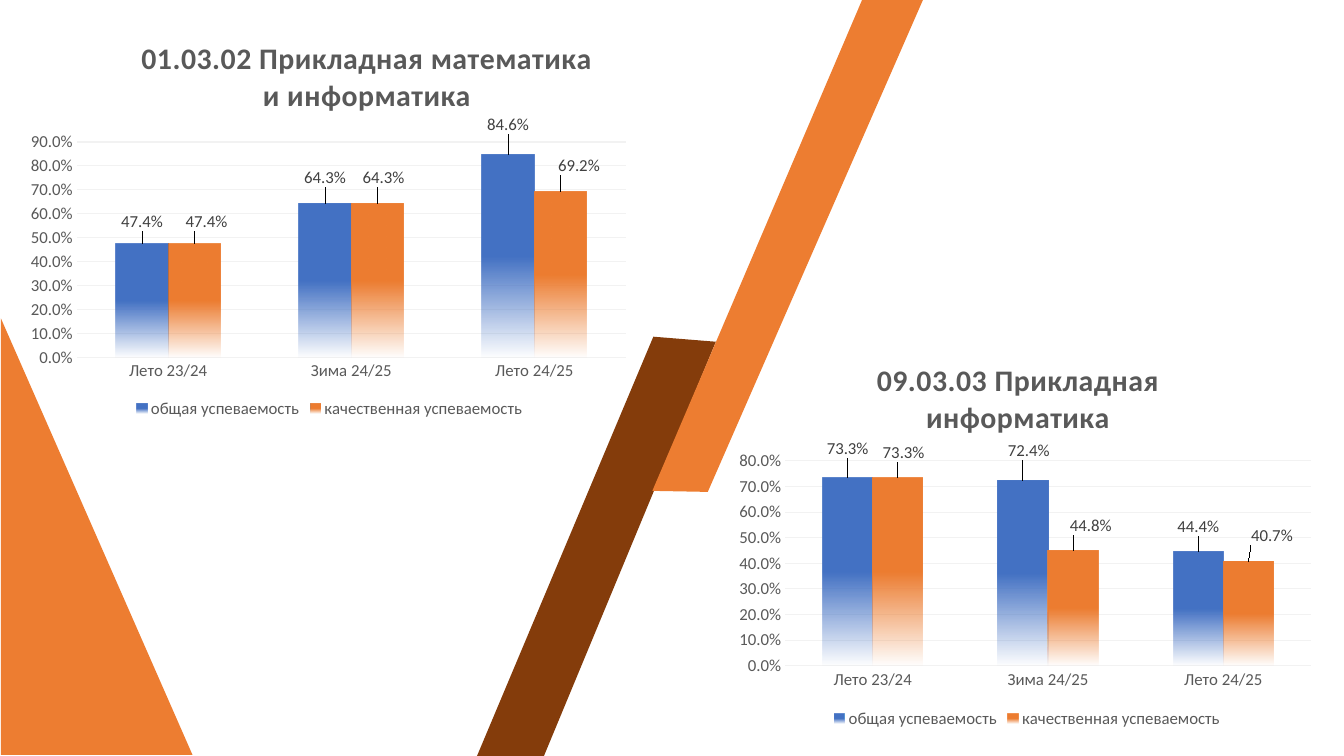
from lxml import etree
from pptx import Presentation
from pptx import util as u
from pptx.chart.data import CategoryChartData
from pptx.dml.color import RGBColor
from pptx.enum import chart as ch
from pptx.oxml import parse_xml
from pptx.oxml.ns import nsdecls, qn

BLUE = RGBColor(0x44, 0x72, 0xC4)
ORANGE = RGBColor(0xED, 0x7D, 0x31)
BROWN = RGBColor(0x84, 0x3C, 0x0B)
GREY = RGBColor(0x59, 0x59, 0x59)
DARK_GREY = RGBColor(0x40, 0x40, 0x40)
PALE_GREY = RGBColor(0xF2, 0xF2, 0xF2)
FONT = "Calibri"

# The slide is a grid of 1333 columns by 750 rows
COLUMNS, ROWS = 1333, 750
CELL = u.Inches(0.01)


def write(font, text_frame=None, text="", size=12, color=GREY, bold=False, spacing=0):
    """Format a font, or fill a text frame with one paragraph per line of text."""
    fonts = [font] if font is not None else []
    for number, line in enumerate(text.split("\n") if text_frame is not None else []):
        paragraph = text_frame.add_paragraph() if number else text_frame.paragraphs[0]
        run = paragraph.add_run()
        run.text = line
        run.font._element.set("spc", str(spacing))
        fonts.append(run.font)
    for each in fonts:
        each.name, each.size, each.bold = FONT, u.Pt(size), bold
        each.color.rgb = color


def manual_layout(x, y, w=None, h=None, edge=True):
    """Return a c:layout; x and y are shares of the chart, or offsets without edge."""
    parts = '<c:layoutTarget val="inner"/>' if w else ""
    if edge:
        parts += '<c:xMode val="edge"/><c:yMode val="edge"/>'
    for tag, share in (("x", x), ("y", y), ("w", w), ("h", h)):
        if share is not None:
            parts += f'<c:{tag} val="{share}"/>'
    return parse_xml(f'<c:layout {nsdecls("c")}><c:manualLayout>{parts}'
                     '</c:manualLayout></c:layout>')


deck = Presentation()
deck.slide_width, deck.slide_height = COLUMNS * CELL, ROWS * CELL
slide = deck.slides.add_slide(deck.slide_layouts[6])

bands = [
    (ORANGE, [(1, 316), (1, 749), (191, 749)]),
    (BROWN, [(648, 334), (710, 339), (537, 756), (471, 755)]),
    (ORANGE, [(858, -7), (918, -6), (702, 488), (647, 487)]),
]
for color, corners in bands:
    outline = slide.shapes.build_freeform(*corners[0], scale=CELL)
    outline.add_line_segments(corners[1:], close=True)
    band = outline.convert_to_shape()
    band.shadow.inherit = False
    band.fill.solid()
    band.fill.fore_color.rgb = color
    band.line.fill.background()

TERMS = ["Лето 23/24", "Зима 24/25", "Лето 24/25"]
# Each series: name, colour, values, label offsets as shares of the chart
programmes = [
    dict(title="01.03.02 Прикладная математика\nи информатика",
         box=(21, 16, 612, 403), title_at=(0.19, 0.05),
         plot=(0.09, 0.31, 0.89, 0.53), top=0.9,
         series=[("общая успеваемость", BLUE, (0.474, 0.643, 0.846),
                  [(0, -0.02), (0, -0.03), (0, -0.04)]),
                 ("качественная успеваемость", ORANGE, (0.474, 0.643, 0.692),
                  [(0.02, -0.02), (0.01, -0.03), (0.03, -0.03)])]),
    dict(title="09.03.03 Прикладная\nинформатика",
         box=(726, 336, 586, 391), title_at=(0.24, 0.05),
         plot=(0.09, 0.31, 0.89, 0.52), top=0.8,
         series=[("общая успеваемость", BLUE, (0.733, 0.724, 0.444),
                  [(0, -0.04), (0.01, -0.04), (0, -0.03)]),
                 ("качественная успеваемость", ORANGE, (0.733, 0.448, 0.407),
                  [(0.01, -0.03), (0.03, -0.03), (0.04, -0.03)])]),
]

for programme in programmes:
    data = CategoryChartData(number_format="0.0%")
    data.categories = TERMS
    for name, _, values, _ in programme["series"]:
        data.add_series(name, values)
    left, top, width, height = (side * CELL for side in programme["box"])
    chart = slide.shapes.add_chart(ch.XL_CHART_TYPE.COLUMN_CLUSTERED,
                                   left, top, width, height, data).chart
    write(chart.font, size=10, color=RGBColor(0, 0, 0))

    chart.has_title = True
    title = chart.chart_title
    write(None, title.text_frame, programme["title"], size=21.3, bold=True, spacing=50)
    title.include_in_layout = False
    title_xml = title._element
    for automatic in title_xml.findall(qn("c:layout")):
        title_xml.remove(automatic)
    title_xml.find(qn("c:tx")).addnext(manual_layout(*programme["title_at"]))

    plot_area = chart._chartSpace.chart.plotArea
    for automatic in plot_area.findall(qn("c:layout")):
        plot_area.remove(automatic)
    plot_area.insert(0, manual_layout(*programme["plot"]))

    chart.has_legend = True
    chart.legend.position = ch.XL_LEGEND_POSITION.BOTTOM
    chart.legend.include_in_layout = False
    write(chart.legend.font)

    terms, shares = chart.category_axis, chart.value_axis
    for axis in (terms, shares):
        axis.major_tick_mark = axis.minor_tick_mark = ch.XL_TICK_MARK.NONE
        axis.format.line.fill.background()
        write(axis.tick_labels.font)
    shares.minimum_scale, shares.maximum_scale, shares.major_unit = 0, programme["top"], 0.1
    shares.tick_labels.number_format = "0.0%"
    shares.tick_labels.number_format_is_linked = False
    shares.major_gridlines.format.line.color.rgb = PALE_GREY
    shares.major_gridlines.format.line.width = u.Pt(0.75)

    plot = chart.plots[0]
    plot.gap_width, plot.overlap, plot.vary_by_categories = 150, 0, False
    for bars, (_, color, _, offsets) in zip(plot.series, programme["series"]):
        fill = bars.format.fill
        fill.gradient()
        fill.gradient_angle = 270
        for stop, position in zip(fill.gradient_stops, (0.5, 1)):
            stop.color.rgb, stop.position = color, position
        faded = bars._element.findall(".//" + qn("a:srgbClr"))[-1]
        etree.SubElement(faded, qn("a:alpha")).set("val", "0")
        bars.format.line.fill.background()

        labels = bars.data_labels
        labels.show_value = True
        labels.number_format, labels.number_format_is_linked = "0.0%", False
        labels.position = ch.XL_LABEL_POSITION.OUTSIDE_END
        write(labels.font, color=DARK_GREY)
        for number, offset in enumerate(offsets):
            label = bars.points[number].data_label
            label.position = ch.XL_LABEL_POSITION.OUTSIDE_END
            write(label.font, color=DARK_GREY)
        for label_xml, offset in zip(bars._element.iter(qn("c:dLbl")), offsets):
            label_xml.find(qn("c:idx")).addnext(manual_layout(*offset, edge=False))

deck.save("out.pptx")
